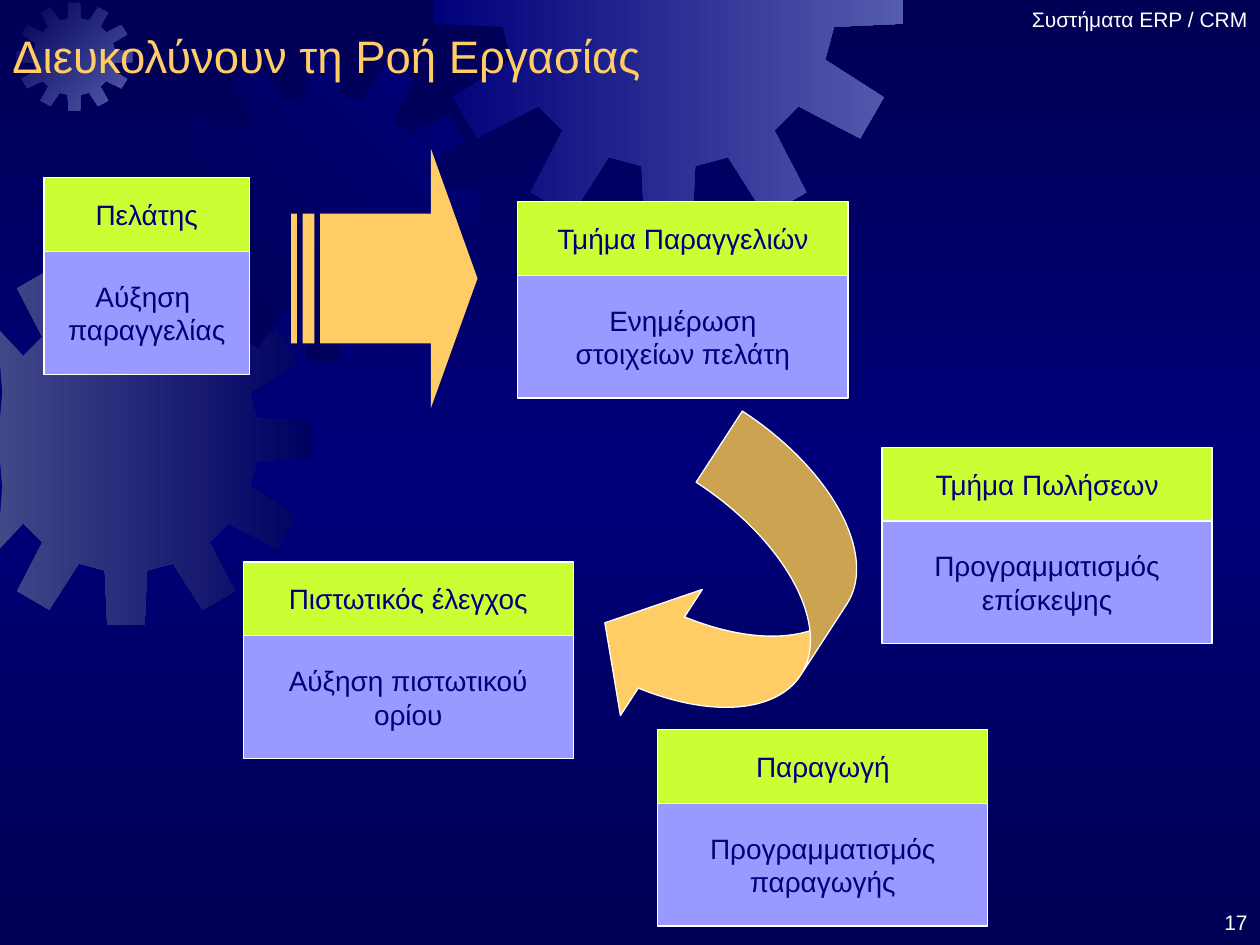
from collections import namedtuple
from copy import deepcopy
from dataclasses import dataclass
from math import cos, pi, sin

from pptx import Presentation
from pptx.dml.color import RGBColor
from pptx.enum.shapes import MSO_SHAPE as Shape
from pptx.enum.text import MSO_ANCHOR as Anchor, PP_ALIGN as Align
from pptx.util import Inches, Pt


@dataclass(frozen=True)
class Theme:
    font: str = "Arial"
    title_size: int = 26
    card_size: int = 16
    small_size: int = 12
    line_width: float = 0.75
    title: str = "FFCC66"
    arrow: str = "FFCC66"
    white: str = "FFFFFF"
    head: str = "CCFF33"
    body: str = "9999FF"
    navy: str = "00007A"
    deep: str = "000054"
    shade: str = "000062"
    slate: str = "424788"
    haze: str = "555BAD"


T = Theme()
Box = namedtuple("Box", "x y w h")

# The slide is a grid of 100 columns by 75 rows
WIDTH, HEIGHT = Inches(10), Inches(7.5)
COL, ROW = WIDTH / 100, HEIGHT / 75
HEAD_SHARE = 0.375  # part of a card taken by its heading
TEETH = 12


def emu(box):
    return [round(v * unit) for v, unit in zip(box, (COL, ROW, COL, ROW))]


def rgb(color):
    return RGBColor.from_string(color)


def set_gradient(fill, colors, angle):
    """Spread the colours evenly; the angle runs clockwise."""
    fill.gradient()
    fill.gradient_angle = -angle % 360
    for _ in colors[2:]:
        first = fill.gradient_stops[0]._gs
        first.addnext(deepcopy(first))
    for i, (stop, color) in enumerate(zip(fill.gradient_stops, colors)):
        stop.position = i / (len(colors) - 1)
        stop.color.rgb = rgb(color)


def write(sp, lines, size, color, align, anchor=Anchor.TOP, wrap=True):
    tf = sp.text_frame
    tf.word_wrap = wrap
    tf.vertical_anchor = anchor
    tf.text = "\n".join(lines)
    for p in tf.paragraphs:
        p.alignment = align
        p.font.name, p.font.size = T.font, Pt(size)
        p.font.color.rgb = rgb(color)


def add_label(slide, box, text, size, color, align):
    write(slide.shapes.add_textbox(*emu(box)), [text], size, color, align)


def add_solid(slide, kind, box, color, outlined=True):
    sp = slide.shapes.add_shape(kind, *emu(box))
    sp.shadow.inherit = False
    sp.fill.solid()
    sp.fill.fore_color.rgb = rgb(color)
    if outlined:
        sp.line.color.rgb = rgb(T.white)
        sp.line.width = Pt(T.line_width)
    else:
        sp.line.fill.background()
    return sp


def add_gear(slide, box, colors, angle):
    """Toothed wheel filling the box, cut off at the slide's left and top."""
    tip, root = 1, 0.71
    profile = [(-0.16, root), (-0.1, tip), (0.1, tip), (0.16, root)]
    points = []
    for tooth in range(TEETH):
        for turn, radius in profile:
            a = 2 * pi * tooth / TEETH + turn
            x = box.x + box.w / 2 * (1 + radius * cos(a))
            y = box.y + box.h / 2 * (1 + radius * sin(a))
            points.append((round(max(x, 0) * COL), round(max(y, 0) * ROW)))
    builder = slide.shapes.build_freeform(*points[0])
    builder.add_line_segments(points[1:], close=True)
    sp = builder.convert_to_shape()
    sp.shadow.inherit = False
    sp.line.fill.background()
    set_gradient(sp.fill, colors, angle)


def add_card(slide, box, heading, lines):
    """Green heading above a lilac step."""
    split = box.h * HEAD_SHARE
    parts = [
        (Box(box.x, box.y, box.w, split), T.head, [heading]),
        (Box(box.x, box.y + split, box.w, box.h - split), T.body, lines),
    ]
    for part, color, text in parts:
        sp = add_solid(slide, Shape.RECTANGLE, part, color)
        write(sp, text, T.card_size, T.navy, Align.CENTER, Anchor.MIDDLE, False)


def add_backdrop(slide):
    set_gradient(slide.background.fill, [T.deep, T.navy, T.deep], 90)
    add_gear(slide, Box(-4.8, 20.1, 29.6, 29.6), [T.slate, T.shade], 0)
    add_gear(slide, Box(1.3, 0.2, 9.2, 8.6), [T.deep, T.haze], 45)
    add_gear(slide, Box(13.2, 3.9, 24.8, 24.8), [T.deep, T.navy], 315)
    add_gear(slide, Box(34.3, -18.8, 37.5, 37.6), [T.navy, T.haze], 0)


def add_frame(slide):
    add_label(slide, Box(79.7, 0, 20.3, 3), "Συστήματα ERP / CRM",
              T.small_size, T.white, Align.RIGHT)
    add_label(slide, Box(79.2, 71.7, 20.8, 3.3), "17",
              T.small_size, T.white, Align.RIGHT)
    add_label(slide, Box(0, 1.7, 100, 7.5), "Διευκολύνουν τη Ροή Εργασίας",
              T.title_size, T.title, Align.LEFT)


def add_workflow(slide):
    wide, narrow, tall = 26.2, 16.3, 15.6
    cards = [
        (3.5, 14.1, narrow, "Πελάτης", ["Αύξηση ", "παραγγελίας"]),
        (41.1, 16, wide, "Τμήμα Παραγγελιών", ["Ενημέρωση", "στοιχείων πελάτη"]),
        (70, 35.5, wide, "Τμήμα Πωλήσεων", ["Προγραμματισμός", "επίσκεψης"]),
        (52.2, 57.9, wide, "Παραγωγή", ["Προγραμματισμός", "παραγωγής"]),
        (19.3, 44.6, wide, "Πιστωτικός έλεγχος", ["Αύξηση πιστωτικού", "ορίου"]),
    ]
    for x, y, w, heading, lines in cards:
        add_card(slide, Box(x, y, w, tall), heading, lines)

    # Arrow from the customer to the order department
    sp = add_solid(slide, Shape.STRIPED_RIGHT_ARROW,
                   Box(23.1, 11.8, 14.8, 20.6), T.arrow, outlined=False)
    sp.adjustments[0], sp.adjustments[1] = 0.5, 0.25

    # Arrow sweeping round the departments
    sp = add_solid(slide, Shape.CURVED_LEFT_ARROW,
                   Box(50.6, 34.7, 15.3, 26), T.arrow)
    sp.rotation = 33
    for i, value in enumerate([0.44, 0.78, 0.33]):
        sp.adjustments[i] = value


def main():
    prs = Presentation()
    prs.slide_width, prs.slide_height = WIDTH, HEIGHT
    slide = prs.slides.add_slide(prs.slide_layouts[6])
    add_backdrop(slide)
    add_frame(slide)
    add_workflow(slide)
    prs.save("out.pptx")


if __name__ == "__main__":
    main()
